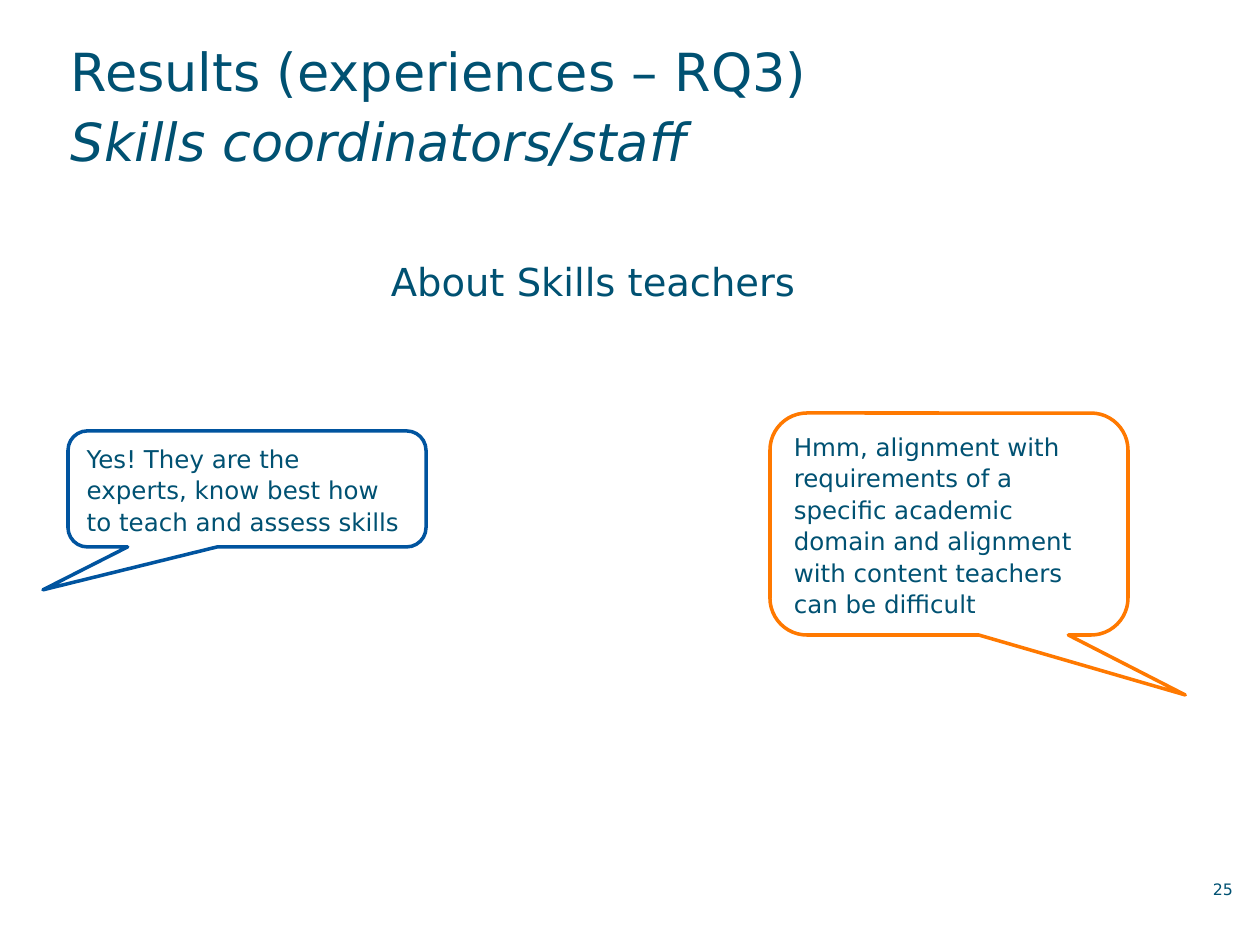
from pptx import Presentation
from pptx.dml.color import RGBColor
from pptx.enum.shapes import MSO_SHAPE as Shape
from pptx.enum.text import MSO_ANCHOR as Anchor, PP_ALIGN as Align
from pptx.util import Emu, Pt

COLORS = {"text": "005172", "paper": "FFFFFF", "agree": "00549F", "doubt": "FF7900"}
FONT = "DejaVu Sans"
EMU_PER_PX = 914400 / 126
INSETS = (13, 6, 13, 6)


def px(length):
    return Emu(round(length * EMU_PER_PX))


def rgb(name):
    return RGBColor.from_string(COLORS[name])


def assign(target, values):
    for name, value in values.items():
        setattr(target, name, value)


class SlideBuilder:
    def __init__(self, page):
        self.page = page

    def fill_text(self, box, lines, size, leading, insets=INSETS,
                  anchor=Anchor.TOP, align=Align.LEFT):
        """Fill a box with one paragraph of (text, italic) lines."""
        left, top, right, bottom = map(px, insets)
        assign(box.text_frame, {
            "word_wrap": True, "vertical_anchor": anchor,
            "margin_left": left, "margin_top": top,
            "margin_right": right, "margin_bottom": bottom,
        })
        para = box.text_frame.paragraphs[0]
        assign(para, {"alignment": align, "line_spacing": Pt(leading)})
        for index, (text, italic) in enumerate(lines):
            if index:
                para.add_line_break()
            span = para.add_run()
            span.text = text
            assign(span.font, {"name": FONT, "size": Pt(size), "italic": italic})
            span.font.color.rgb = rgb("text")

    def text(self, area, lines, size, leading, **layout):
        box = self.page.shapes.add_textbox(*map(px, area))
        self.fill_text(box, lines, size, leading, **layout)

    def callout(self, area, tip, color, text):
        box = self.page.shapes.add_shape(Shape.ROUNDED_RECTANGULAR_CALLOUT, *map(px, area))
        box.shadow.inherit = False
        for index, value in enumerate(tip):
            box.adjustments[index] = value
        box.fill.solid()
        box.fill.fore_color.rgb = rgb("paper")
        box.line.color.rgb = rgb(color)
        box.line.width = Pt(2)
        self.fill_text(box, [(text, False)], 14, 18, anchor=Anchor.MIDDLE)


def main():
    deck = Presentation()
    assign(deck, {"slide_width": px(1260), "slide_height": px(945)})
    builder = SlideBuilder(deck.slides.add_slide(deck.slide_layouts[6]))

    # Title and topic
    builder.text((68, 32, 1163, 183),
                 [("Results (experiences – RQ3)", False), ("Skills coordinators/staff", True)],
                 30, 40, insets=(3, 0, 13, 44))
    builder.text((378, 255, 440, 352), [("About Skills teachers", False)], 22, 25)

    # Opposing views
    builder.callout((68, 431, 358, 116), (-0.57, 0.87), "agree",
                    "Yes! They are the experts, know best how to teach and assess skills")
    builder.callout((770, 413, 358, 222), (0.66, 0.77), "doubt",
                    "Hmm, alignment with requirements of a specific academic domain "
                    "and alignment with content teachers can be difficult")

    # Page number
    builder.text((1174, 878, 64, 23), [("25", False)], 9, 12,
                 insets=(13, 0, 5, 0), align=Align.RIGHT)

    deck.save("out.pptx")


if __name__ == "__main__":
    main()
